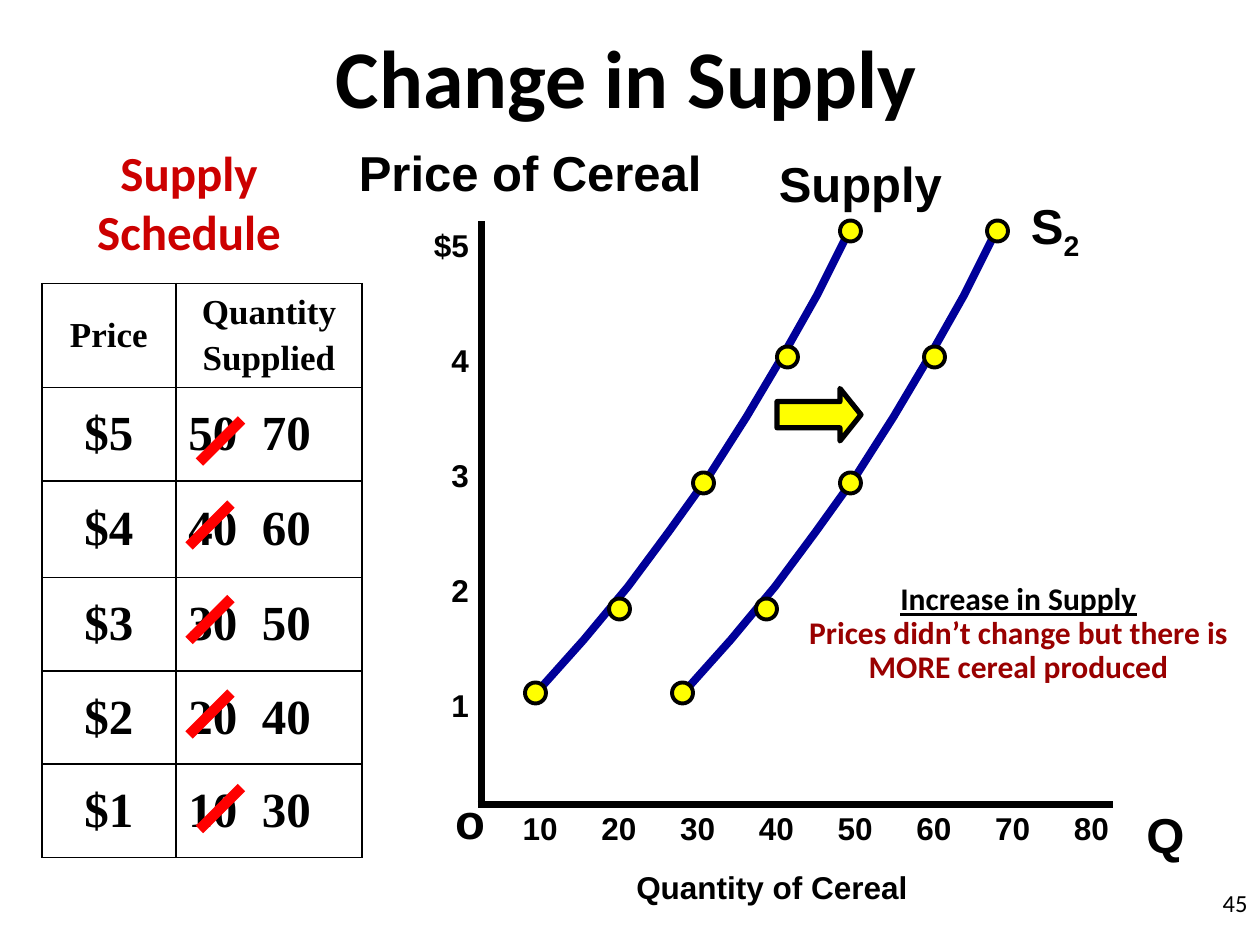
from lxml.etree import SubElement
from pptx import Presentation
from pptx.dml.color import RGBColor
from pptx.enum.shapes import MSO_CONNECTOR, MSO_SHAPE
from pptx.enum.text import MSO_ANCHOR, MSO_AUTO_SIZE, PP_ALIGN
from pptx.oxml.ns import qn
from pptx.util import Pt

BLACK, YELLOW = "000000", "FFFF00"
CURVE = [(0, 252), (28, 224), (55, 195), (80, 165), (105, 134),
         (128, 102), (150.5, 68.5), (172, 35), (192, 0)]
DOTS = [(300, 390), (348, 342), (396, 270), (444, 198), (480, 126)]
SHIFT = 84  # distance from the first supply curve to the second
SCHEDULE = [("$5", 50, 70), ("$4", 40, 60), ("$3", 30, 50),
            ("$2", 20, 40), ("$1", 10, 30)]
STRIKES = [(114, 240), (108, 288), (108, 342), (108, 396), (114, 450)]


def rgb(color):
    return RGBColor.from_string(color)


def add_run(p, text, size=28, font="Arial", color=BLACK, bold=True, underline=False):
    r = p.add_run()
    r.text = text
    f = r.font
    f.size, f.name, f.bold, f.underline = Pt(size), font, bold, underline
    f.color.rgb = rgb(color)
    return r


def add_paragraph(tf, text, align=PP_ALIGN.LEFT, first=True, before=0, after=0,
                  spacing=1.0, **fmt):
    p = tf.paragraphs[0] if first else tf.add_paragraph()
    p.alignment, p.line_spacing = align, spacing
    p.space_before, p.space_after = Pt(before), Pt(after)
    add_run(p, text, **fmt)
    return p


def set_tabs(p, *positions):
    tabs = SubElement(p._p.get_or_add_pPr(), qn("a:tabLst"))
    for pos in positions:
        SubElement(tabs, qn("a:tab"), pos=str(int(Pt(pos))), algn="l")


def add_box(s, x, y, w, h, wrap=False, anchor=MSO_ANCHOR.TOP):
    tf = s.shapes.add_textbox(Pt(x), Pt(y), Pt(w), Pt(h)).text_frame
    tf.word_wrap, tf.vertical_anchor = wrap, anchor
    tf.auto_size = MSO_AUTO_SIZE.NONE if wrap else MSO_AUTO_SIZE.SHAPE_TO_FIT_TEXT
    return tf


def add_label(s, text, x, y, w, h, wrap=False, anchor=MSO_ANCHOR.TOP, **fmt):
    return add_paragraph(add_box(s, x, y, w, h, wrap, anchor), text, **fmt)


def add_line(s, x1, y1, x2, y2, color, width):
    line = s.shapes.add_connector(MSO_CONNECTOR.STRAIGHT, Pt(x1), Pt(y1), Pt(x2), Pt(y2))
    line.line.color.rgb = rgb(color)
    line.line.width = Pt(width)
    SubElement(line._element.spPr, qn("a:effectLst"))


def add_yellow_shape(s, kind, x, y, w, h, width):
    sp = s.shapes.add_shape(kind, Pt(x), Pt(y), Pt(w), Pt(h))
    sp.shadow.inherit = False
    sp.fill.solid()
    sp.fill.fore_color.rgb = rgb(YELLOW)
    sp.line.color.rgb = rgb(BLACK)
    sp.line.width = Pt(width)
    return sp


def add_supply_curve(s, shift):
    points = [(Pt(300 + shift + x), Pt(138 + y)) for x, y in CURVE]
    builder = s.shapes.build_freeform(*points[0])
    builder.add_line_segments(points[1:], close=False)
    sp = builder.convert_to_shape()
    sp.rotation = -3.2
    sp.shadow.inherit = False
    sp.fill.background()
    sp.line.color.rgb = rgb("000099")
    sp.line.width = Pt(4.5)
    for x, y in DOTS:
        add_yellow_shape(s, MSO_SHAPE.OVAL, x + shift, y, 12, 12, 2.25)


def add_borders(cell):
    tcPr = cell._tc.get_or_add_tcPr()
    for i, side in enumerate(("lnL", "lnR", "lnT", "lnB")):
        ln = tcPr.makeelement(qn(f"a:{side}"), {"w": str(int(Pt(1)))})
        fill = SubElement(ln, qn("a:solidFill"))
        SubElement(fill, qn("a:srgbClr"), val=BLACK)
        tcPr.insert(i, ln)


def add_cell_text(cell, *lines, size=28, align=PP_ALIGN.CENTER):
    for i, line in enumerate(lines):
        add_paragraph(cell.text_frame, line, align, first=i == 0, before=size / 5,
                      size=size, font="Times New Roman")


def add_schedule(s):
    rows = len(SCHEDULE) + 1
    table = s.shapes.add_table(rows, 2, Pt(24), Pt(162), Pt(183), Pt(328)).table
    table.first_row = table.horz_banding = False
    for col, width in zip(table.columns, (76.5, 106.5)):
        col.width = Pt(width)
    for row, height in zip(table.rows, (59.5, 53.3, 55.3, 53.3, 53.3, 53.3)):
        row.height = Pt(height)
    for cell in table.iter_cells():
        cell.fill.background()
        cell.vertical_anchor = MSO_ANCHOR.MIDDLE
        add_borders(cell)
    add_cell_text(table.cell(0, 0), "Price", size=20)
    add_cell_text(table.cell(0, 1), "Quantity", "Supplied", size=20)
    for i, (price, old, new) in enumerate(SCHEDULE, 1):
        add_cell_text(table.cell(i, 0), price)
        quantity = table.cell(i, 1)
        add_cell_text(quantity, f"{old}\t{new}", align=PP_ALIGN.LEFT)
        set_tabs(quantity.text_frame.paragraphs[0], 42)
    for x, y in STRIKES:
        add_line(s, x, y + 24, x + 24, y, "FF0000", 6)


def add_axes(s):
    add_line(s, 275, 126.5, 275, 462, BLACK, 4)
    add_line(s, 273, 460, 636, 460, BLACK, 4)
    tf = add_box(s, 240.5, 125.5, 34.5, 289)
    for i, price in enumerate(("$5", "4", "3", "2", "1")):
        add_paragraph(tf, price, PP_ALIGN.RIGHT, first=i == 0,
                      after=44.2 if price != "1" else 0, size=18)
    quantities = "\t".join(str(q) for q in range(10, 90, 10))
    p = add_label(s, quantities, 291.5, 458.5, 356.5, 29, wrap=True, size=18)
    set_tabs(p, *(45 * i for i in range(1, 8)))
    add_label(s, "Q", 648, 456, 36, 41)
    add_label(s, "o", 253, 448, 32, 41)
    add_label(s, "Price of Cereal", 198, 78, 211, 41, anchor=MSO_ANCHOR.MIDDLE)
    add_label(s, "Quantity of Cereal", 356.5, 489, 221, 36,
              anchor=MSO_ANCHOR.MIDDLE, size=18)


def add_title(s):
    title = s.shapes.title
    title.left, title.top, title.width, title.height = Pt(18), Pt(9.5), Pt(680), Pt(67.5)
    title.text_frame.vertical_anchor = MSO_ANCHOR.MIDDLE
    add_paragraph(title.text_frame, "Change in Supply", PP_ALIGN.CENTER,
                  size=46.8, font="Calibri")


def add_explanation(s):
    tf = add_box(s, 444, 330, 276, 111, wrap=True)
    style = dict(align=PP_ALIGN.CENTER, spacing=0.9, size=18, font="Calibri")
    add_paragraph(tf, "Increase in Supply", underline=True, **style)
    add_paragraph(tf, "Prices didn’t change but there is MORE cereal produced",
                  first=False, color="990000", **style)


def main():
    prs = Presentation()
    prs.slide_width, prs.slide_height = Pt(720), Pt(540)
    s = prs.slides.add_slide(prs.slide_layouts[5])
    add_title(s)
    add_axes(s)
    add_label(s, "Supply Schedule", 24, 78, 168, 74, wrap=True,
              align=PP_ALIGN.CENTER, font="Calibri", color="CC0000")
    add_supply_curve(s, 0)
    add_label(s, "Supply", 438, 84, 108, 41)
    add_supply_curve(s, SHIFT)
    p = add_label(s, "S", 582, 108, 44, 41)
    add_run(p, "2").font._element.set("baseline", "-25000")
    arrow = add_yellow_shape(s, MSO_SHAPE.RIGHT_ARROW, 444, 222, 48, 30, 3)
    arrow.adjustments[1] = 0.4
    add_schedule(s)
    add_explanation(s)
    add_label(s, "45", 570, 504, 150, 36, wrap=True, align=PP_ALIGN.RIGHT,
              size=14, font="Calibri", bold=False)
    prs.save("out.pptx")


if __name__ == "__main__":
    main()
